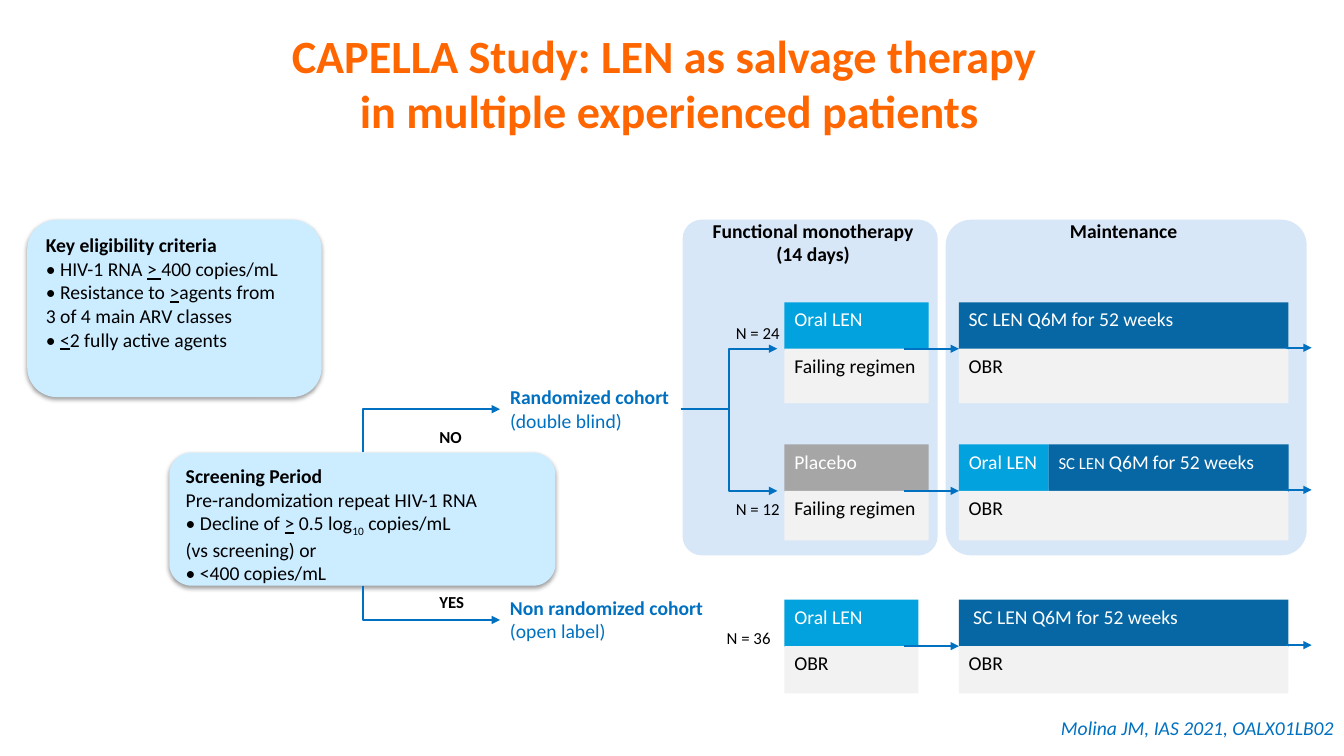
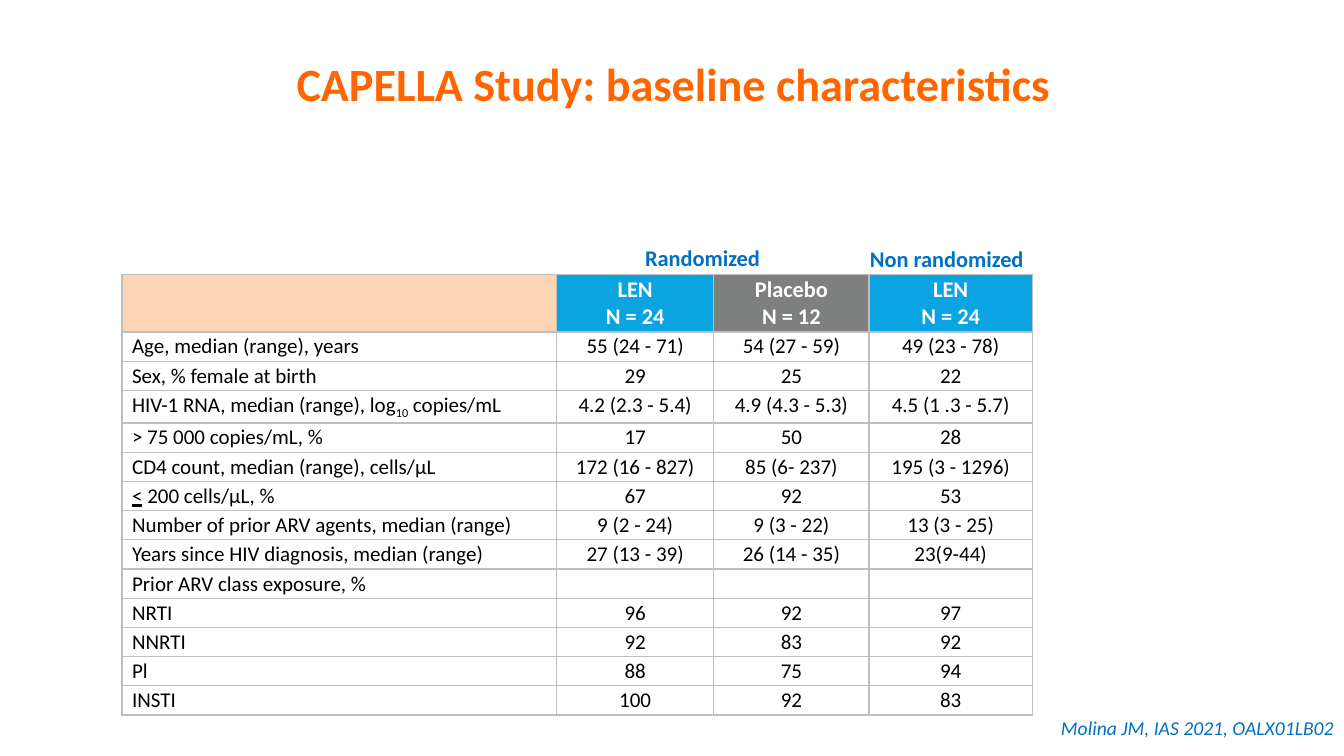
from lxml.etree import SubElement
from pptx import Presentation
from pptx.dml.color import RGBColor
from pptx.enum.shapes import MSO_CONNECTOR, MSO_SHAPE
from pptx.enum.text import MSO_ANCHOR, PP_ALIGN
from pptx.oxml.ns import qn
from pptx.util import Emu, Pt

SCALE = 9144
WIDE, HIGH = 1333, 750
BLACK, WHITE = "000000", "FFFFFF"
ORANGE, BLUE = "FF6600", "0070C0"
SKY, NAVY, GRAY, PALE = "02A2DE", "0667A4", "A6A6A6", "F2F2F2"
PANEL, NOTE, RULE = "D8E7F7", "CCECFF", "BFBFBF"
BODY = {"name": "Calibri", "size": 14, "color": BLACK, "bold": False}
BOLD = {"bold": True}
SMALL = {"size": 12}
LINE = {"underline": True}
SUB = {"base": -25000}
LEFT, MID, RIGHT = PP_ALIGN.LEFT, PP_ALIGN.CENTER, PP_ALIGN.RIGHT


def px(num):
    return Emu(num * SCALE)


def rgb(code):
    return RGBColor.from_string(code)


def style(run, form):
    for key, val in form.items():
        if key == "color":
            run.font.color.rgb = rgb(val)
        elif key == "base":
            run.font._element.set("baseline", str(val))
        else:
            setattr(run.font, key, Pt(val) if key == "size" else val)


def write(frame, paras, form, align=LEFT):
    """Fill a frame; a paragraph is a string or a list of strings and (string, format) pairs."""
    form = BODY | form
    for num, para in enumerate(paras):
        par = frame.add_paragraph() if num else frame.paragraphs[0]
        par.alignment = align
        for piece in [para] if isinstance(para, str) else para:
            text, extra = (piece, {}) if isinstance(piece, str) else piece
            for row, part in enumerate(text.split("\n")):
                if row:
                    par.add_line_break()
                run = par.add_run()
                run.text = part
                style(run, form | extra)


def label(slide, box, paras, form={}, align=LEFT, wrap=False, anchor=MSO_ANCHOR.TOP):
    frame = slide.shapes.add_textbox(*map(px, box)).text_frame
    frame.word_wrap = wrap
    frame.vertical_anchor = anchor
    write(frame, paras, form, align)


def block(slide, box, fill, paras=(), color=BLACK, kind=MSO_SHAPE.RECTANGLE):
    shape = slide.shapes.add_shape(kind, *map(px, box))
    shape.shadow.inherit = False
    shape.fill.solid()
    shape.fill.fore_color.rgb = rgb(fill)
    shape.line.fill.background()
    shape.text_frame.vertical_anchor = MSO_ANCHOR.TOP
    write(shape.text_frame, paras, {"color": color})
    return shape


def card(slide, box, paras):
    """Rounded note with a soft shadow."""
    shape = block(slide, box, NOTE, paras, kind=MSO_SHAPE.ROUNDED_RECTANGLE)
    glow = SubElement(shape._element.spPr.find(qn("a:effectLst")), qn("a:outerShdw"),
                      blurRad=str(Pt(3.1)), dist=str(Pt(1.6)), dir="5400000",
                      algn="t", rotWithShape="0")
    tone = SubElement(glow, qn("a:srgbClr"), val=BLACK)
    SubElement(tone, qn("a:alpha"), val="38000")


def panel(slide, box, head, spot):
    """Rounded backdrop with a heading at spot, an offset and size within the box."""
    shape = block(slide, box, PANEL, kind=MSO_SHAPE.ROUNDED_RECTANGLE)
    shape.adjustments[0] = 0.075
    left, top, wide, high = spot
    label(slide, (box[0] + left, box[1] + top, wide, high), [head], BOLD, MID)


def arrow(slide, start, end, bend=None):
    """Arrow; bend is the share of the width before an elbow turns."""
    kind = MSO_CONNECTOR.STRAIGHT if bend is None else MSO_CONNECTOR.ELBOW
    link = slide.shapes.add_connector(kind, *map(px, start + end))
    link.line.color.rgb = rgb(BLUE)
    link.line.width = Pt(1.5)
    props = link._element.spPr
    SubElement(link.line._get_or_add_ln(), qn("a:tailEnd"), type="triangle")
    SubElement(props, qn("a:effectLst"))
    if bend is not None:
        shape = props.find(qn("a:prstGeom"))
        points = shape.find(qn("a:avLst"))
        if points is None:
            points = SubElement(shape, qn("a:avLst"))
        SubElement(points, qn("a:gd"), name="adj1", fmla=f"val {round(bend * 100000)}")


def arm(slide, box, first, base, later, count, spot):
    """Treatment arm: two stacked bars, then the maintenance bars, joined by arrows."""
    left, top, wide, high = box
    head, next_left, span = 47, left + 173, 327
    mid, low = top + head - 1, high - head + 1
    text, fill = first
    block(slide, (left, top, wide, head), fill, [text], WHITE)
    block(slide, (left, mid, wide, low), PALE, [base])
    at = next_left
    for para, fill, size in later:
        block(slide, (at, top, size, head), fill, [para], WHITE)
        at += size
    block(slide, (next_left, mid, span, low), PALE, ["OBR"])
    label(slide, (left + spot[0], top + spot[1], 64, 30), [count], SMALL)
    arrow(slide, (left + 119, mid), (next_left, mid))
    arrow(slide, (left + 497, mid - 1), (left + 523, mid - 1))


def cohort(slide, box, name, kind):
    label(slide, box, [[(name, BOLD)], kind], {"color": BLUE})


def frame(deck, title, left):
    """New slide with the shared title and source line."""
    slide = deck.slides.add_slide(deck.slide_layouts[6])
    label(slide, (left, 1, 926, 162), [title],
          {"size": 33, "color": ORANGE, "bold": True}, MID, True, MSO_ANCHOR.MIDDLE)
    label(slide, (874, 705, 459, 34), ["Molina JM, IAS 2021, OALX01LB02"],
          {"color": BLUE, "italic": True}, RIGHT, True)
    return slide


def design(deck):
    slide = frame(deck, "CAPELLA Study: LEN as salvage therapy \n"
                        "in multiple experienced patients", 201)
    panel(slide, (677, 218, 253, 333), "Functional monotherapy\n(14 days)", (19, -6, 221, 57))
    panel(slide, (938, 218, 358, 333), "Maintenance", (113, -6, 127, 34))
    card(slide, (27, 218, 292, 176), [
        [("Key eligibility criteria", BOLD)],
        ["• HIV-1 RNA ", ("> ", LINE), "400 copies/mL"],
        ["• Resistance to ", (">", LINE), "agents from \n3 of 4 main ARV classes"],
        ["• ", ("<", LINE), "2 fully active agents"]])
    card(slide, (168, 449, 383, 132), [
        [("Screening Period", BOLD)],
        "Pre-randomization repeat HIV-1 RNA",
        ["• Decline of ", (">", LINE), " 0.5 log", ("10", SUB), " copies/mL"],
        "(vs screening) or",
        "• <400 copies/mL"])
    for top, text in ((418, "NO"), (582, "YES")):
        label(slide, (426, top, 45, 30), [text], SMALL | BOLD)
    cohort(slide, (496, 377, 179, 57), "Randomized cohort", "(double blind)")
    cohort(slide, (496, 586, 213, 57), "Non randomized cohort", "(open label)")

    dose, oral = "SC LEN Q6M for 52 weeks", ("Oral LEN", SKY)
    mixed = [("SC LEN ", SMALL), "Q6M", (" ", SMALL), "for 52 weeks"]
    arm(slide, (778, 300, 143, 100), oral, "Failing regimen",
        [(dose, NAVY, 327)], "N = 24", (-58, 15))
    arm(slide, (778, 441, 143, 95), ("Placebo", GRAY), "Failing regimen",
        [(*oral, 89), (mixed, NAVY, 238)], "N = 12", (-58, 49))
    arm(slide, (778, 595, 133, 93), oral, "OBR",
        [(" " + dose, NAVY, 327)], "N = 36", (-67, 23))

    for start, end, bend in (((675, 406), (771, 346), 0.5), ((675, 406), (771, 487), 0.5),
                             ((360, 449), (496, 406), 0), ((360, 581), (496, 615), 0)):
        arrow(slide, start, end, bend)


HEADS = (("", "FCD5B5"), ("LEN\nN = 24", "0AA4E0"),
         ("Placebo\nN = 12", "7E7F7F"), ("LEN\nN = 24", "09A4E1"))
ROWS = (
    ("Age, median (range), years", "55 (24 - 71)", "54 (27 - 59)", "49 (23 - 78)"),
    ("Sex, % female at birth", "29", "25", "22"),
    (["HIV-1 RNA, median (range), log", ("10", SUB), " copies/mL"],
     "4.2 (2.3 - 5.4)", "4.9 (4.3 - 5.3)", "4.5 (1 .3 - 5.7)"),
    ("> 75 000 copies/mL, %", "17", "50", "28"),
    ("CD4 count, median (range), cells/μL", "172 (16 - 827)", "85 (6- 237)", "195 (3 - 1296)"),
    ([("<", LINE), " 200 cells/μL, %"], "67", "92", "53"),
    ("Number of prior ARV agents, median (range)", "9 (2 - 24)", "9 (3 - 22)", "13 (3 - 25)"),
    ("Years since HIV diagnosis, median (range)", "27 (13 - 39)", "26 (14 - 35)", "23(9-44)"),
    ("Prior ARV class exposure, %", "", "", ""),
    ("NRTI", "96", "92", "97"),
    ("NNRTI", "92", "83", "92"),
    ("Pl", "88", "75", "94"),
    ("INSTI", "100", "92", "83"),
)


def fill_cell(cell, paras, fill, form, align):
    for side in ("lnL", "lnR", "lnT", "lnB"):
        edge = SubElement(cell._tc.get_or_add_tcPr(), qn(f"a:{side}"), w=str(Pt(1)))
        SubElement(SubElement(edge, qn("a:solidFill")), qn("a:srgbClr"), val=RULE)
    cell.fill.solid()
    cell.fill.fore_color.rgb = rgb(fill)
    cell.margin_left = cell.margin_right = px(10)
    cell.margin_top = cell.margin_bottom = px(2)
    if paras == [""]:
        SubElement(cell.text_frame.paragraphs[0]._p, qn("a:endParaRPr"),
                   sz=str(form["size"] * 100))
    else:
        write(cell.text_frame, paras, form, align)


def grid(slide, box, cols):
    table = slide.shapes.add_table(len(ROWS) + 1, len(cols), *map(px, box)).table
    table.first_row = table.horz_banding = False
    for col, size in zip(table.columns, cols):
        col.width = px(size)
    for num, row in enumerate(table.rows):
        row.height = px(27 if num else 51)
    for col, (text, fill) in enumerate(HEADS):
        fill_cell(table.cell(0, col), text.split("\n"), fill,
                  {"size": 16, "color": WHITE, "bold": True}, MID)
    for num, row in enumerate(ROWS, 1):
        for col, para in enumerate(row):
            fill_cell(table.cell(num, col), [para], WHITE, {"size": 15}, MID if col else LEFT)


def baseline(deck):
    slide = frame(deck, "CAPELLA Study: baseline characteristics", 205)
    grid(slide, (121, 272, 903, 402), (431, 156, 154, 162))
    form = {"size": 16, "color": BLUE, "bold": True}
    label(slide, (629, 232, 142, 44), [["Randomized", (" ", {"size": 20})]], form, MID)
    label(slide, (802, 238, 279, 37), ["Non randomized "], form, MID, True)


def main():
    deck = Presentation()
    deck.slide_width, deck.slide_height = px(WIDE), px(HIGH)
    design(deck)
    baseline(deck)
    deck.save("out.pptx")


if __name__ == "__main__":
    main()
